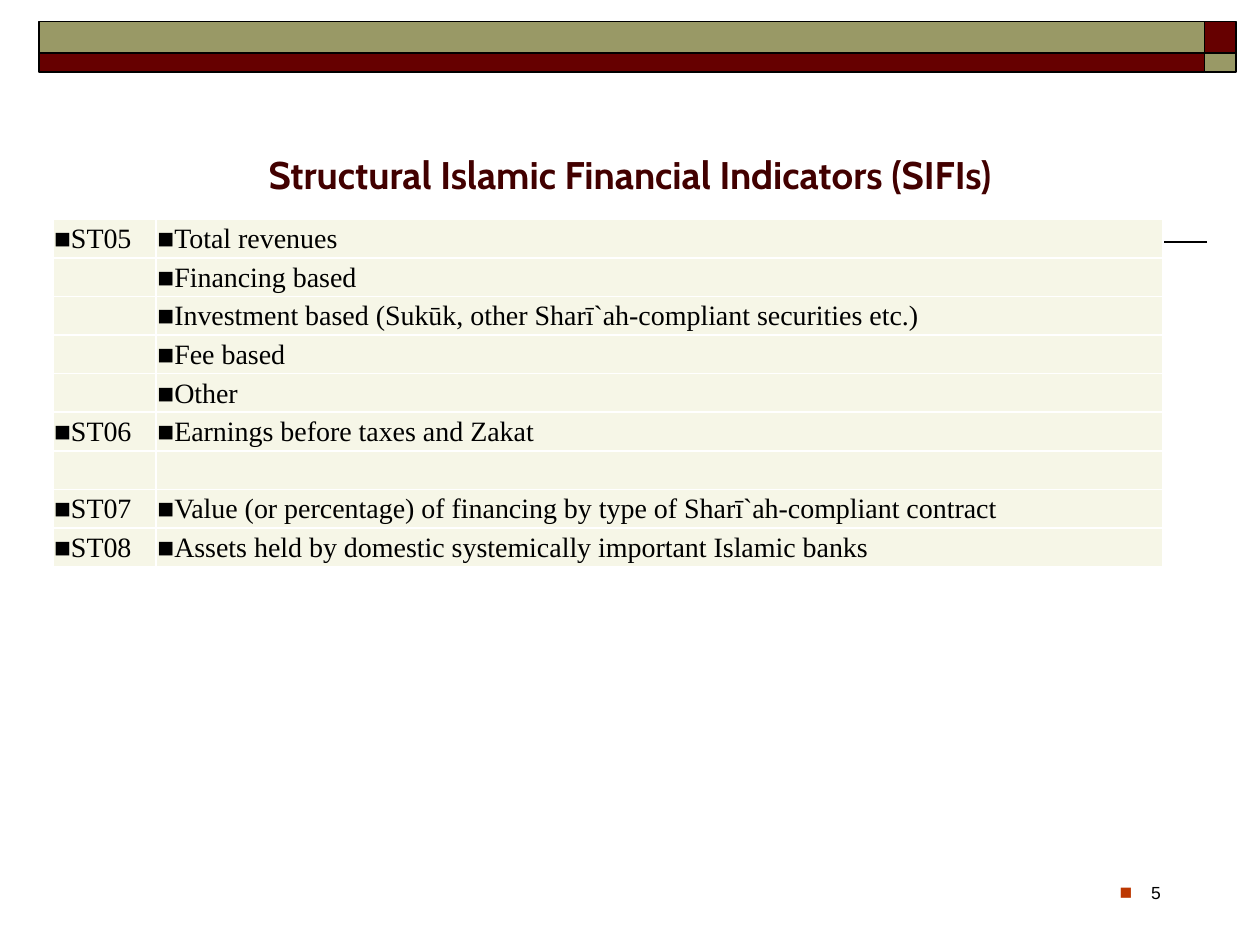
from lxml import etree
from pptx import Presentation
from pptx.dml.color import RGBColor
from pptx.enum import shapes, text
from pptx.oxml import ns
from pptx.util import Inches, Pt

BLACK = RGBColor(0x00, 0x00, 0x00)
WHITE = RGBColor(0xFF, 0xFF, 0xFF)
MAROON = RGBColor(0x66, 0x00, 0x00)
OLIVE = RGBColor(0x99, 0x99, 0x66)
TITLE_RED = RGBColor(0x42, 0x00, 0x00)
BULLET_RED = RGBColor(0xBC, 0x37, 0x00)
CREAM = RGBColor(0xF6, 0xF6, 0xE7)

INDICATORS = [
    ("ST05", "Total revenues"),
    ("", "Financing based"),
    ("", "Investment based (Sukūk, other Sharī`ah-compliant securities etc.)"),
    ("", "Fee based"),
    ("", "Other"),
    ("ST06", "Earnings before taxes and Zakat"),
    ("", ""),
    ("ST07", "Value (or percentage) of financing by type of Sharī`ah-compliant contract"),
    ("ST08", "Assets held by domestic systemically important Islamic banks"),
]


def add_child(parent, tag, **attributes):
    """Append a DrawingML element to the parent and return it."""
    return etree.SubElement(parent, ns.qn(tag), attributes)


def style_runs(para, font, size, color, bold=False):
    """Format every run of a paragraph."""
    for span in para.runs:
        span.font.name = font
        span.font.size = Pt(size)
        span.font.bold = bold
        span.font.color.rgb = color


def add_bullet(para, color, percent, indent):
    """Give a paragraph a square bullet with a hanging indent."""
    props = para._p.get_or_add_pPr()
    props.set("marL", str(indent))
    props.set("indent", str(-indent))
    add_child(add_child(props, "a:buClr"), "a:srgbClr", val=str(color))
    add_child(props, "a:buSzPct", val=str(percent * 1000))
    add_child(props, "a:buFont", typeface="Times New Roman")
    add_child(props, "a:buChar", char="■")


def add_banner(page, left, top, width, height):
    """Draw the two-row header band with its contrasting end squares."""
    end, upper = Inches(0.25), Inches(0.25)
    columns = [(left, width - end), (left + width - end, end)]
    rows = [(top, upper), (top + upper, height - upper)]
    for i, (y, tall) in enumerate(rows):
        for j, (x, wide) in enumerate(columns):
            block = page.shapes.add_shape(shapes.MSO_SHAPE.RECTANGLE, x, y, wide, tall)
            block.shadow.inherit = False
            block.fill.solid()
            block.fill.fore_color.rgb = MAROON if i != j else OLIVE
            block.line.color.rgb = BLACK
            block.line.width = Pt(1)


def add_rule(page, left, top, width):
    """Draw the thin horizontal rule under the title."""
    rule = page.shapes.add_connector(
        shapes.MSO_CONNECTOR.STRAIGHT, left + width, top, left, top)
    rule.line.color.rgb = BLACK
    rule.line.width = Pt(1)
    add_child(rule._element.spPr, "a:effectLst")


def set_title(page, left, top, width, height):
    """Place and format the title placeholder."""
    title = page.shapes.title
    title.left, title.top, title.width, title.height = left, top, width, height
    frame = title.text_frame
    frame.text = "Structural Islamic Financial Indicators (SIFIs)"
    frame.vertical_anchor = text.MSO_ANCHOR.MIDDLE
    para = frame.paragraphs[0]
    para.alignment = text.PP_ALIGN.CENTER
    style_runs(para, "Cabin", 22, TITLE_RED, bold=True)


def fill_cell(cell, wording):
    """Write one table cell with its bullet, fill and white borders."""
    cell.margin_left = cell.margin_right = cell.margin_top = Inches(0.01)
    cell.margin_bottom = 0
    cell.vertical_anchor = text.MSO_ANCHOR.MIDDLE
    para = cell.text_frame.paragraphs[0]
    if wording:
        para.text = wording
        style_runs(para, "Times New Roman", 16, BLACK)
        para.space_before = Pt(3.2)
        add_bullet(para, BLACK, 100, 0)
    else:
        add_child(para._p, "a:endParaRPr", sz="1600")
    props = cell._tc.get_or_add_tcPr()
    for side in ("a:lnL", "a:lnR", "a:lnT", "a:lnB"):
        border = add_child(props, side, w=str(Pt(1)))
        add_child(add_child(border, "a:solidFill"), "a:srgbClr", val=str(WHITE))
    cell.fill.solid()
    cell.fill.fore_color.rgb = CREAM


def add_indicators(page, left, top, width, height):
    """Build the table of indicator codes and descriptions."""
    table = page.shapes.add_table(len(INDICATORS), 2, left, top, width, height).table
    table.first_row = table.horz_banding = False
    table.columns[0].width = Inches(0.82)
    table.columns[1].width = width - Inches(0.82)
    for row, wordings in zip(table.rows, INDICATORS):
        for cell, wording in zip(row.cells, wordings):
            fill_cell(cell, wording)


def add_page_number(page, left, top, width, height):
    """Write the bulleted page number at the lower right."""
    box = page.shapes.add_textbox(left, top, width, height)
    box.text_frame.word_wrap = True
    para = box.text_frame.paragraphs[0]
    para.text = "5"
    para.alignment = text.PP_ALIGN.RIGHT
    style_runs(para, "Arial", 10, BLACK)
    add_bullet(para, BULLET_RED, 120, Inches(0.25))


def main():
    """Build the slide and save the deck."""
    deck = Presentation()
    deck.slide_width, deck.slide_height = Inches(10), Inches(7.5)
    page = deck.slides.add_slide(deck.slide_layouts[5])
    add_rule(page, Inches(0.5), Inches(1.92), Inches(9.08))
    add_banner(page, Inches(0.31), Inches(0.17), Inches(9.5), Inches(0.4))
    set_title(page, Inches(0.69), Inches(1.11), Inches(8.62), Inches(0.54))
    add_indicators(page, Inches(0.42), Inches(1.74), Inches(8.81), Inches(2.76))
    add_page_number(page, Inches(7.06), Inches(6.95), Inches(2.25), Inches(0.4))
    deck.save("out.pptx")


if __name__ == "__main__":
    main()
